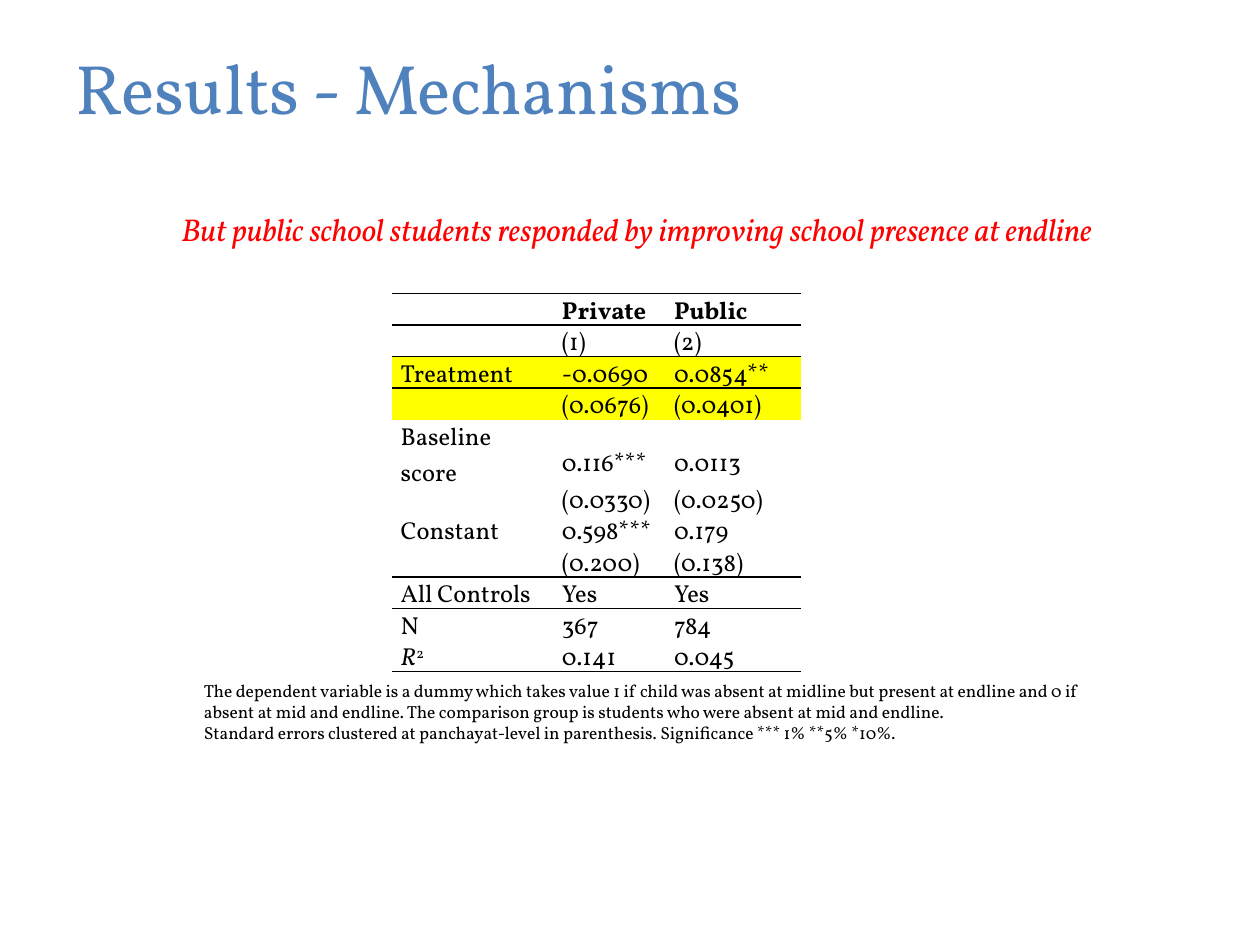
import lxml.etree
import pptx
import pptx.dml.color
import pptx.enum.text
import pptx.oxml.ns
import pptx.util

Inches = pptx.util.Inches
Anchor = pptx.enum.text.MSO_ANCHOR
FONT = "Vollkorn"
BLACK = "000000"
YELLOW = "FFFF00"
NO_STYLE = "{2D5ABB26-0587-4C30-8999-92F81FD0307C}"
COLUMN_WIDTHS = [1.28, 0.89, 1.08]
ROW_HEIGHT = 0.25
HEADER_ROWS = 2
HIGHLIGHTED_ROWS = {2, 3}
TALL_ROW = 4
RULES_ABOVE = {0, 1, 2, 8, 11}
RESULTS = [
    ["", "Private", "Public"],
    ["", "(1)", "(2)"],
    ["Treatment", "-0.0690", "0.0854**"],
    ["", "(0.0676)", "(0.0401)"],
    ["Baseline score", "0.116***", "0.0113"],
    ["", "(0.0330)", "(0.0250)"],
    ["Constant", "0.598***", "0.179"],
    ["", "(0.200)", "(0.138)"],
    ["All Controls", "Yes", "Yes"],
    ["N", "367", "784"],
    ["R", "0.141", "0.045"],
]
NOTES = [
    "The dependent variable is a dummy which takes value 1 if child was absent at midline but present at endline and 0 if",
    "absent at mid and endline. The comparison group is students who were absent at mid and endline.",
    "Standard errors clustered at panchayat-level in parenthesis. Significance *** 1% **5% *10%.",
]


def color(value):
    """Turn a hex string into a colour."""
    return pptx.dml.color.RGBColor.from_string(value)


def add_span(para, text, size, ink=BLACK, bold=False, italic=False):
    """Add one formatted run to a paragraph and return it."""
    span = para.add_run()
    span.text = text
    span.font.name = FONT
    span.font.size = pptx.util.Pt(size)
    span.font.bold = bold
    span.font.italic = italic
    span.font.color.rgb = color(ink)
    return span


def add_text(page, area, lines, size, ink=BLACK, italic=False, anchor=Anchor.TOP):
    """Add a text box with one paragraph for each line."""
    box = page.shapes.add_textbox(*[Inches(length) for length in area])
    frame = box.text_frame
    frame.word_wrap = True
    frame.vertical_anchor = anchor
    for index, line in enumerate(lines):
        para = frame.add_paragraph() if index else frame.paragraphs[0]
        add_span(para, line, size, ink, italic=italic)


def add_rule(cell, side):
    """Draw a black one-point border on one side of a cell."""
    properties = cell._tc.get_or_add_tcPr()
    name = pptx.oxml.ns.qn
    line = lxml.etree.SubElement(properties, name(f"a:{side}"), w="12700")
    fill = lxml.etree.SubElement(line, name("a:solidFill"))
    lxml.etree.SubElement(fill, name("a:srgbClr"), val=BLACK)


def fill_cell(cell, text, row, column):
    """Format one table cell and write its text."""
    cell.margin_left = cell.margin_right = Inches(0.07)
    cell.margin_top = cell.margin_bottom = 0
    cell.vertical_anchor = Anchor.BOTTOM if column else Anchor.TOP
    if row in RULES_ABOVE:
        add_rule(cell, "lnT")
    if row + 1 in RULES_ABOVE:
        add_rule(cell, "lnB")
    if row in HIGHLIGHTED_ROWS:
        cell.fill.solid()
        cell.fill.fore_color.rgb = color(YELLOW)
    else:
        cell.fill.background()
    para = cell.text_frame.paragraphs[0]
    para.line_spacing = 1.07
    para.font.size = pptx.util.Pt(14)
    if text:
        add_span(para, text, 14, bold=row == 0, italic=text == "R")
    else:
        lxml.etree.SubElement(para._p, pptx.oxml.ns.qn("a:endParaRPr"), sz="1400")
    if text == "R":
        power = add_span(para, "2", 14)
        power.font._element.set("baseline", "30000")


def add_results(page):
    """Add the regression table."""
    height = ROW_HEIGHT * (len(RESULTS) + 1)
    table = page.shapes.add_table(
        len(RESULTS), len(COLUMN_WIDTHS), Inches(3.11), Inches(2.33),
        Inches(sum(COLUMN_WIDTHS)), Inches(height)).table
    table.first_row = table.horz_banding = False
    table._tbl.tblPr.find(pptx.oxml.ns.qn("a:tableStyleId")).text = NO_STYLE
    for column, width in enumerate(COLUMN_WIDTHS):
        table.columns[column].width = Inches(width)
    for row, values in enumerate(RESULTS):
        lines = 2 if row == TALL_ROW else 1
        table.rows[row].height = Inches(ROW_HEIGHT * lines)
        for column, text in enumerate(values):
            fill_cell(table.cell(row, column), text, row, column)


def main():
    """Build the slide and save it."""
    deck = pptx.Presentation()
    deck.slide_width, deck.slide_height = Inches(10), Inches(7.5)
    page = deck.slides.add_slide(deck.slide_layouts[6])
    add_text(page, (0.5, 0.3, 9, 0.77), ["Results - Mechanisms"], 40, "4F81BD",
             anchor=Anchor.MIDDLE)
    add_text(page, (1.34, 1.62, 8.09, 0.4),
             ["But public school students responded by improving school presence at endline"],
             18, "FF0000", italic=True)
    add_text(page, (1.52, 5.35, 7.5, 0.61), NOTES, 10)
    add_results(page)
    deck.save("out.pptx")


if __name__ == "__main__":
    main()
